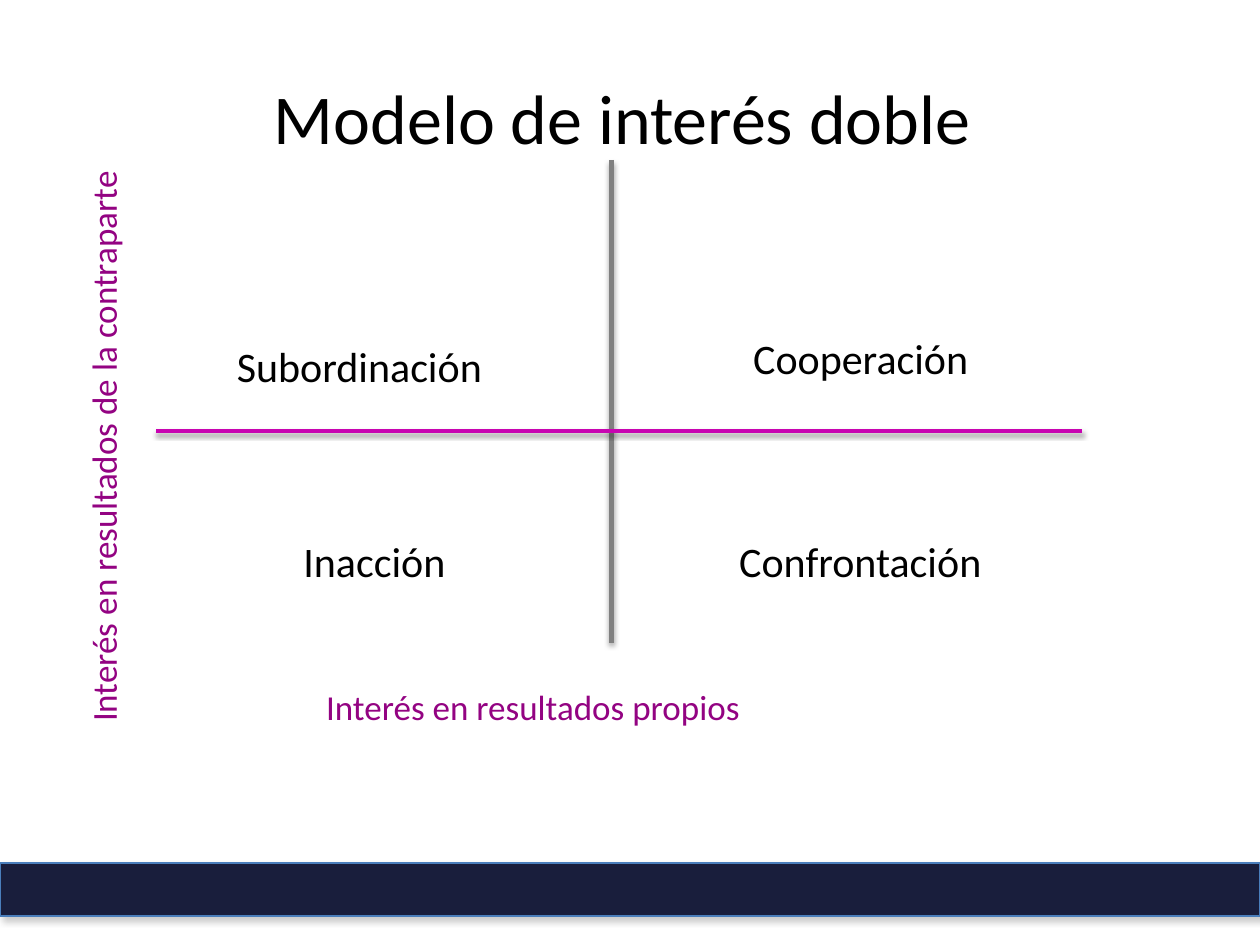
from collections import namedtuple

from lxml import etree
from pptx import Presentation
from pptx import util as u
from pptx.dml import color
from pptx.enum import shapes, text
from pptx.oxml import ns

COLORS = {"ink": "000000", "purple": "930382", "magenta": "C804B1",
          "gray": "808080", "navy": "191E3C", "edge": "4A7EBB"}
FONT = "Calibri"
Box = namedtuple("Box", "left top width height")


def rgb(name):
    """Return the named palette colour."""
    return color.RGBColor.from_string(COLORS[name])


def place(shape, box):
    """Move and size a shape to a box in points."""
    shape.left, shape.top, shape.width, shape.height = map(u.Pt, box)


def style(frame, size, ink):
    """Format every run of a text frame."""
    for para in frame.paragraphs:
        for span in para.runs:
            span.font.name, span.font.size = FONT, u.Pt(size)
            span.font.color.rgb = rgb(ink)


def add_shadow(shape, ink, alpha, blur, distance, angle):
    """Give a shape an outer shadow."""
    effects = etree.SubElement(shape._element.spPr, ns.qn("a:effectLst"))
    shadow = etree.SubElement(effects, ns.qn("a:outerShdw"), blurRad=str(u.Pt(blur)),
                              dist=str(u.Pt(distance)), dir=str(angle * 60000),
                              rotWithShape="0")
    tint = etree.SubElement(shadow, ns.qn("a:srgbClr"), val=COLORS[ink])
    etree.SubElement(tint, ns.qn("a:alpha"), val=str(alpha * 1000))


def add_title(page, box, words):
    """Fill the title placeholder."""
    title = page.shapes.title
    place(title, box)
    frame = title.text_frame
    frame.text = words
    frame.vertical_anchor = text.MSO_ANCHOR.MIDDLE
    frame.paragraphs[0].alignment = text.PP_ALIGN.CENTER
    style(frame, 40, "ink")


def add_label(page, box, words, size, ink, wrap=False, rotation=0):
    """Add one text box that grows with its text."""
    label = page.shapes.add_textbox(*map(u.Pt, box))
    label.rotation = rotation
    frame = label.text_frame
    frame.text = words
    frame.word_wrap = wrap
    frame.auto_size = text.MSO_AUTO_SIZE.SHAPE_TO_FIT_TEXT
    style(frame, size, ink)


def add_axis(page, start, end, ink, width, shadow):
    """Draw one axis of the matrix."""
    axis = page.shapes.add_connector(
        shapes.MSO_CONNECTOR.STRAIGHT, *map(u.Pt, (*start, *end)))
    axis.line.color.rgb = rgb(ink)
    axis.line.width = u.Pt(width)
    add_shadow(axis, "ink", *shadow)


def add_matrix(page, box):
    """Place the quadrant names, axes and axis captions."""
    left, top, width, height = box
    quadrants = [("Subordinación", 39, 99.4, 161), ("Cooperación", 334, 95, 139),
                 ("Inacción", 77, 211, 96.5), ("Confrontación", 326, 211, 155.5)]
    for words, across, down, wide in quadrants:
        add_label(page, Box(left + across, top + down, wide, 36), words, 24, "ink")
    middle_x, middle_y = left + 260, top + 154.8
    add_axis(page, (middle_x, top), (middle_x, top + height), "gray", 3,
             (35, 3.1, 1.8, 90))
    add_axis(page, (left, middle_y), (left + width, middle_y), "magenta", 2,
             (38, 3.1, 1.6, 90))
    add_label(page, Box(left + 90, top + 296.7, 349, 31.5),
              "Interés en resultados propios", 20, "purple", wrap=True)
    add_label(page, Box(left - 197.3, top + 145.5, 334, 31.5),
              "Interés en resultados de la contraparte", 20, "purple", rotation=270)


def add_footer(page, box):
    """Draw the dark band at the foot of the page."""
    band = page.shapes.add_shape(shapes.MSO_SHAPE.RECTANGLE, *map(u.Pt, box))
    band.fill.solid()
    band.fill.fore_color.rgb = rgb("navy")
    band.line.color.rgb = rgb("edge")
    band.line.width = u.Pt(0.75)
    add_shadow(band, "gray", 40, 4, 3, 45)


def main():
    """Build and save the deck."""
    deck = Presentation()
    deck.slide_width, deck.slide_height = u.Pt(720), u.Pt(540)
    page = deck.slides.add_slide(deck.slide_layouts[5])
    add_title(page, Box(36, 21.6, 648, 90), "Modelo de interés doble ")
    add_matrix(page, Box(89.3, 91.4, 529.2, 275.8))
    add_footer(page, Box(0, 493.2, 720, 30.2))
    deck.save("out.pptx")


if __name__ == "__main__":
    main()
